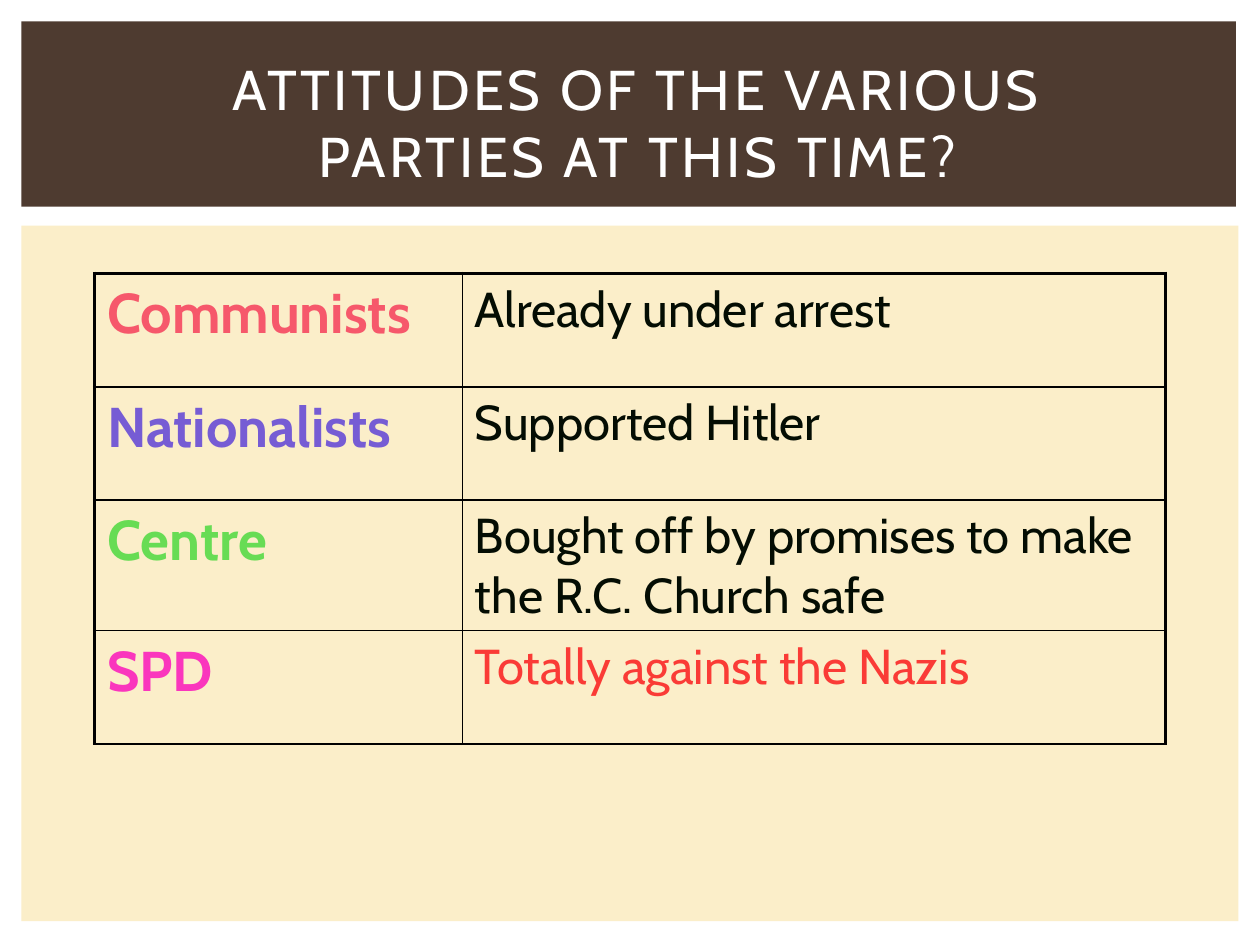
from lxml import etree
from pptx import Presentation
from pptx.dml.color import RGBColor
from pptx.enum.shapes import MSO_SHAPE
from pptx.enum.text import MSO_ANCHOR, PP_ALIGN
from pptx.oxml.ns import qn
from pptx.util import Inches, Pt

FONT = "Cabin"
THIN, THICK = 1, 2.25
COLUMN_WIDTHS = [2.92, 5.58]
ROW_HEIGHTS = [0.9, 0.9, 1.03, 0.9]
PARTIES = [
    ("Communists", "F6586B", "Already under arrest", "040D03"),
    ("Nationalists", "765CD4", "Supported Hitler", "040D03"),
    ("Centre", "67DC54", "Bought off by promises to make the R.C. Church safe", "040D03"),
    ("SPD", "FA36BD", "Totally against the Nazis", "FA3B36"),
]


def color(value):
    return RGBColor.from_string(value)


def add_run(paragraph, text, size, font_color, bold=False):
    run = paragraph.add_run()
    run.text = text
    run.font.name = FONT
    run.font.size = Pt(size)
    run.font.bold = bold
    run.font.color.rgb = color(font_color)
    return run


def add_panel(slide, box, fill_color):
    panel = slide.shapes.add_shape(MSO_SHAPE.RECTANGLE, *map(Inches, box))
    panel.shadow.inherit = False
    panel.fill.solid()
    panel.fill.fore_color.rgb = color(fill_color)
    panel.line.fill.background()


def add_title(slide, box, text):
    frame = slide.shapes.add_textbox(*map(Inches, box)).text_frame
    frame.word_wrap = True
    frame.vertical_anchor = MSO_ANCHOR.MIDDLE
    paragraph = frame.paragraphs[0]
    paragraph.alignment = PP_ALIGN.CENTER
    run = add_run(paragraph, text, 32, "FFFFFF")
    run._r.get_or_add_rPr().set("spc", "200")


def set_borders(cell, widths):
    properties = cell._tc.get_or_add_tcPr()
    for side, width in widths.items():
        line = etree.SubElement(properties, qn(f"a:ln{side}"), w=str(Pt(width)))
        fill = etree.SubElement(line, qn("a:solidFill"))
        etree.SubElement(fill, qn("a:srgbClr"), val="000000")


def fill_cell(cell, text, size, font_color, bold, borders):
    set_borders(cell, borders)
    cell.fill.background()
    add_run(cell.text_frame.paragraphs[0], text, size, font_color, bold)


def add_party_table(slide, left, top):
    box = (left, top, sum(COLUMN_WIDTHS), sum(ROW_HEIGHTS))
    table = slide.shapes.add_table(
        len(PARTIES), len(COLUMN_WIDTHS), *map(Inches, box)
    ).table
    table.first_row = False
    table.horz_banding = False
    for column, width in zip(table.columns, COLUMN_WIDTHS):
        column.width = Inches(width)
    for index, (party, party_color, attitude, attitude_color) in enumerate(PARTIES):
        table.rows[index].height = Inches(ROW_HEIGHTS[index])
        top_width = THICK if index == 0 else THIN
        fill_cell(table.cell(index, 0), party, 32, party_color, True,
                  {"L": THICK, "R": THIN, "T": top_width, "B": THIN})
        fill_cell(table.cell(index, 1), attitude, 28, attitude_color, False,
                  {"L": THIN, "R": THICK, "T": top_width, "B": THIN})


def main():
    presentation = Presentation()
    presentation.slide_width = Inches(10)
    presentation.slide_height = Inches(7.5)
    slide = presentation.slides.add_slide(presentation.slide_layouts[6])
    add_panel(slide, (0.17, 1.79, 9.66, 5.52), "FBEEC9")
    add_panel(slide, (0.17, 0.17, 9.64, 1.47), "4E3B30")
    add_title(slide, (0.81, 0.34, 8.5, 1.25),
              "ATTITUDES OF THE VARIOUS PARTIES AT THIS TIME?")
    add_party_table(slide, 0.75, 2.17)
    presentation.save("out.pptx")


if __name__ == "__main__":
    main()
